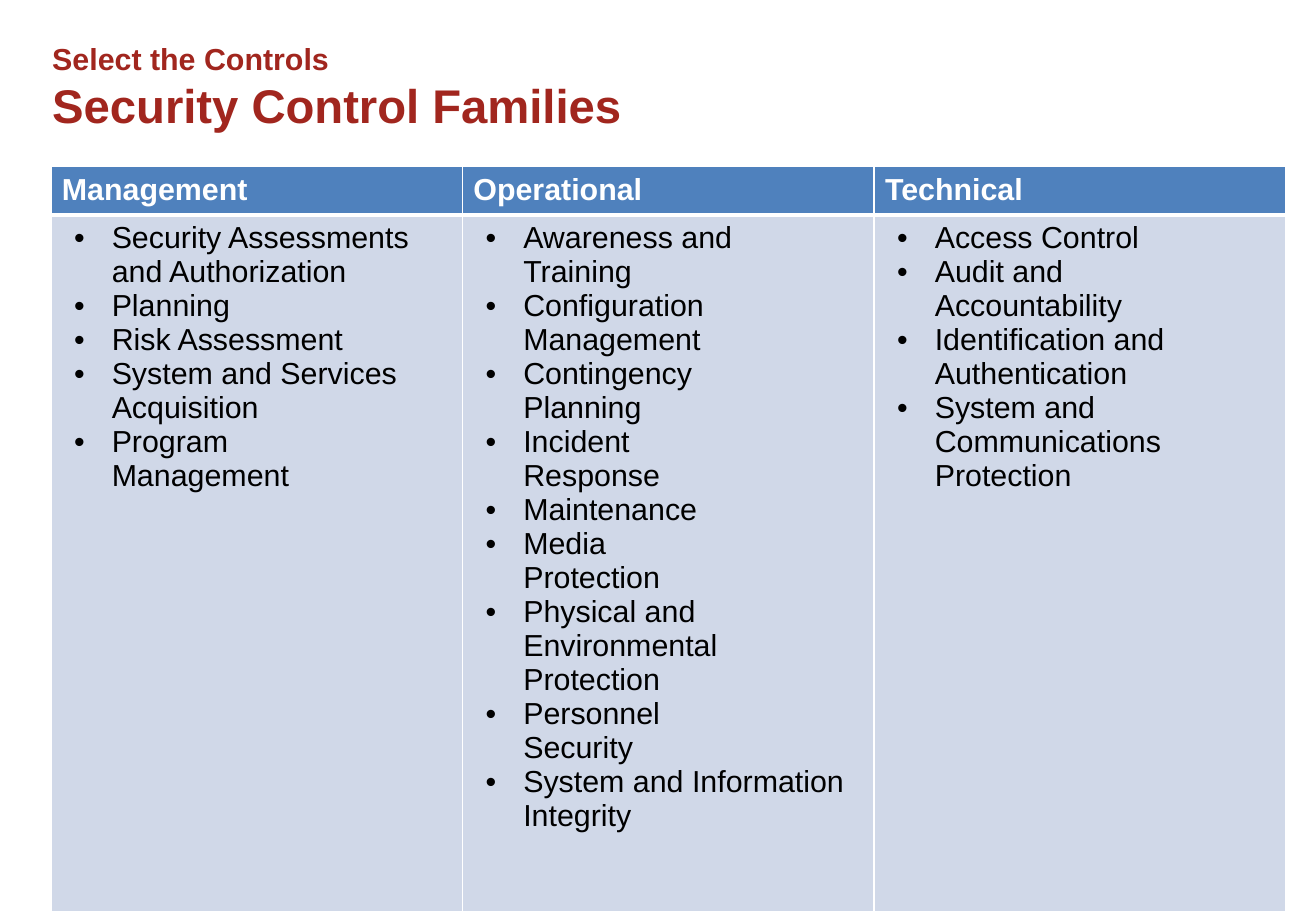
from dataclasses import dataclass

from lxml import etree
from pptx import Presentation
from pptx import util as u
from pptx.dml.color import RGBColor
from pptx.enum import text
from pptx.oxml import ns


@dataclass(frozen=True)
class Theme:
    font: str = "Arial"
    title: str = "A1261E"
    header_fill: str = "4F81BD"
    body_fill: str = "D0D8E8"
    light: str = "FFFFFF"
    dark: str = "000000"
    text_size: float = 18
    title_size: float = 28
    thin: float = 1
    thick: float = 3


THEME = Theme()
WIDTH, HEIGHT = 10.83, 7.5
HEADER_HEIGHT = 0.38

TITLE_LINES = [  # wording, size, line spacing
    ("Select the Controls", THEME.text_size, 21.4),
    ("Security Control Families", THEME.title_size, 33.5),
]
# A newline marks a line break within an item
FAMILIES = {
    "Management": [
        "Security Assessments and Authorization", "Planning", "Risk Assessment",
        "System and Services Acquisition", "Program \nManagement",
    ],
    "Operational": [
        "Awareness and \nTraining", "Configuration Management",
        "Contingency \nPlanning", "Incident \nResponse", "Maintenance",
        "Media \nProtection", "Physical and Environmental \nProtection",
        "Personnel \nSecurity", "System and Information Integrity",
    ],
    "Technical": [
        "Access Control", "Audit and \nAccountability",
        "Identification and Authentication",
        "System and Communications Protection",
    ],
}


def add_text(paragraph, wording, size, color, bold=False):
    for index, part in enumerate(wording.split("\n")):
        if index:
            paragraph.add_line_break()
        run = paragraph.add_run()
        run.text = part
        run.font.name = THEME.font
        run.font.size = u.Pt(size)
        run.font.bold = bold
        run.font.color.rgb = RGBColor.from_string(color)


def add_bullet(paragraph):
    properties = paragraph._p.get_or_add_pPr()
    properties.set("marL", str(u.Inches(0.41)))
    properties.set("indent", str(u.Inches(-0.31)))
    etree.SubElement(properties, ns.qn("a:buFont")).set("typeface", THEME.font)
    etree.SubElement(properties, ns.qn("a:buChar")).set("char", "•")


def style_cell(cell, fill, top, bottom):
    properties = cell._tc.get_or_add_tcPr()
    sides = {"L": THEME.thin, "R": THEME.thin, "T": top, "B": bottom}
    for side, width in sides.items():
        line = etree.SubElement(properties, ns.qn(f"a:ln{side}"), w=str(u.Pt(width)))
        solid = etree.SubElement(line, ns.qn("a:solidFill"))
        etree.SubElement(solid, ns.qn("a:srgbClr")).set("val", THEME.light)
    cell.fill.solid()
    cell.fill.fore_color.rgb = RGBColor.from_string(fill)
    cell.margin_left = cell.margin_right = u.Inches(0.09)
    cell.margin_top = cell.margin_bottom = u.Inches(0.05)


def add_title(slide, left, top, width, height):
    box = slide.shapes.add_textbox(*map(u.Inches, (left, top, width, height)))
    frame = box.text_frame
    frame.word_wrap = True
    frame.vertical_anchor = text.MSO_ANCHOR.TOP
    frame.margin_left = u.Inches(0.01)
    frame.margin_right = frame.margin_top = frame.margin_bottom = 0
    for index, (wording, size, spacing) in enumerate(TITLE_LINES):
        paragraph = frame.add_paragraph() if index else frame.paragraphs[0]
        paragraph.line_spacing = u.Pt(spacing)
        add_text(paragraph, wording, size, THEME.title, bold=True)


def add_families(slide, left, top, width, height):
    frame = slide.shapes.add_table(
        2, len(FAMILIES), *map(u.Inches, (left, top, width, height)))
    table = frame.table
    table.horz_banding = False
    table.rows[0].height = u.Inches(HEADER_HEIGHT)
    table.rows[1].height = u.Inches(height - HEADER_HEIGHT)
    for column, (family, controls) in enumerate(FAMILIES.items()):
        table.columns[column].width = u.Inches(width / len(FAMILIES))

        # Family name
        header = table.cell(0, column)
        style_cell(header, THEME.header_fill, THEME.thin, THEME.thick)
        add_text(header.text_frame.paragraphs[0], family,
                 THEME.text_size, THEME.light, bold=True)

        # Bulleted controls
        body = table.cell(1, column)
        style_cell(body, THEME.body_fill, THEME.thick, THEME.thin)
        for index, control in enumerate(controls):
            paragraph = (body.text_frame.add_paragraph() if index
                         else body.text_frame.paragraphs[0])
            add_bullet(paragraph)
            add_text(paragraph, control, THEME.text_size, THEME.dark)


def main():
    presentation = Presentation()
    presentation.slide_width = u.Inches(WIDTH)
    presentation.slide_height = u.Inches(HEIGHT)
    slide = presentation.slides.add_slide(presentation.slide_layouts[6])
    margin, table_top = 0.42, 1.37
    add_title(slide, margin, 0.33, WIDTH - 2 * margin, 1.18)
    add_families(slide, margin, table_top, 10.16, HEIGHT - table_top)
    presentation.save("out.pptx")


if __name__ == "__main__":
    main()
